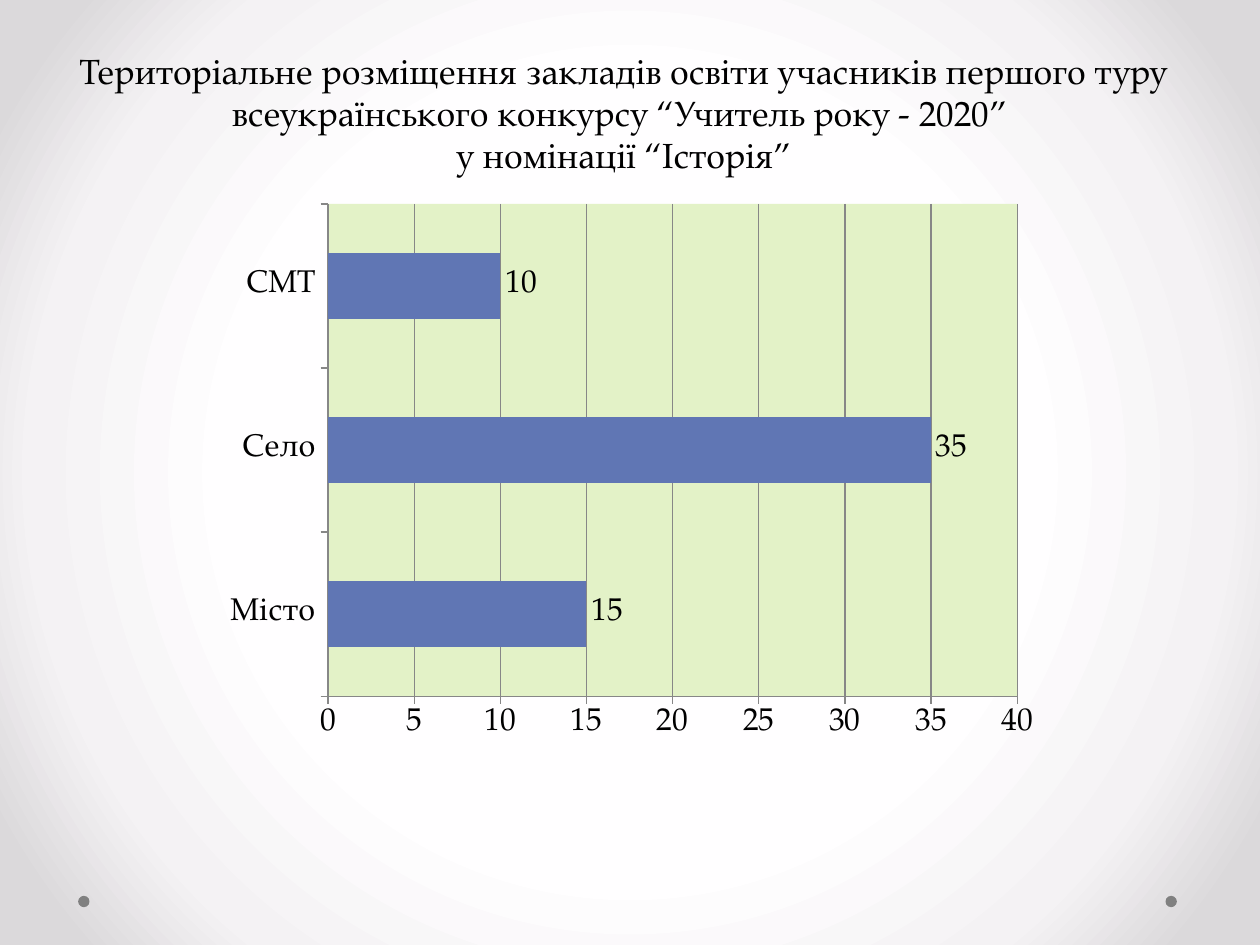
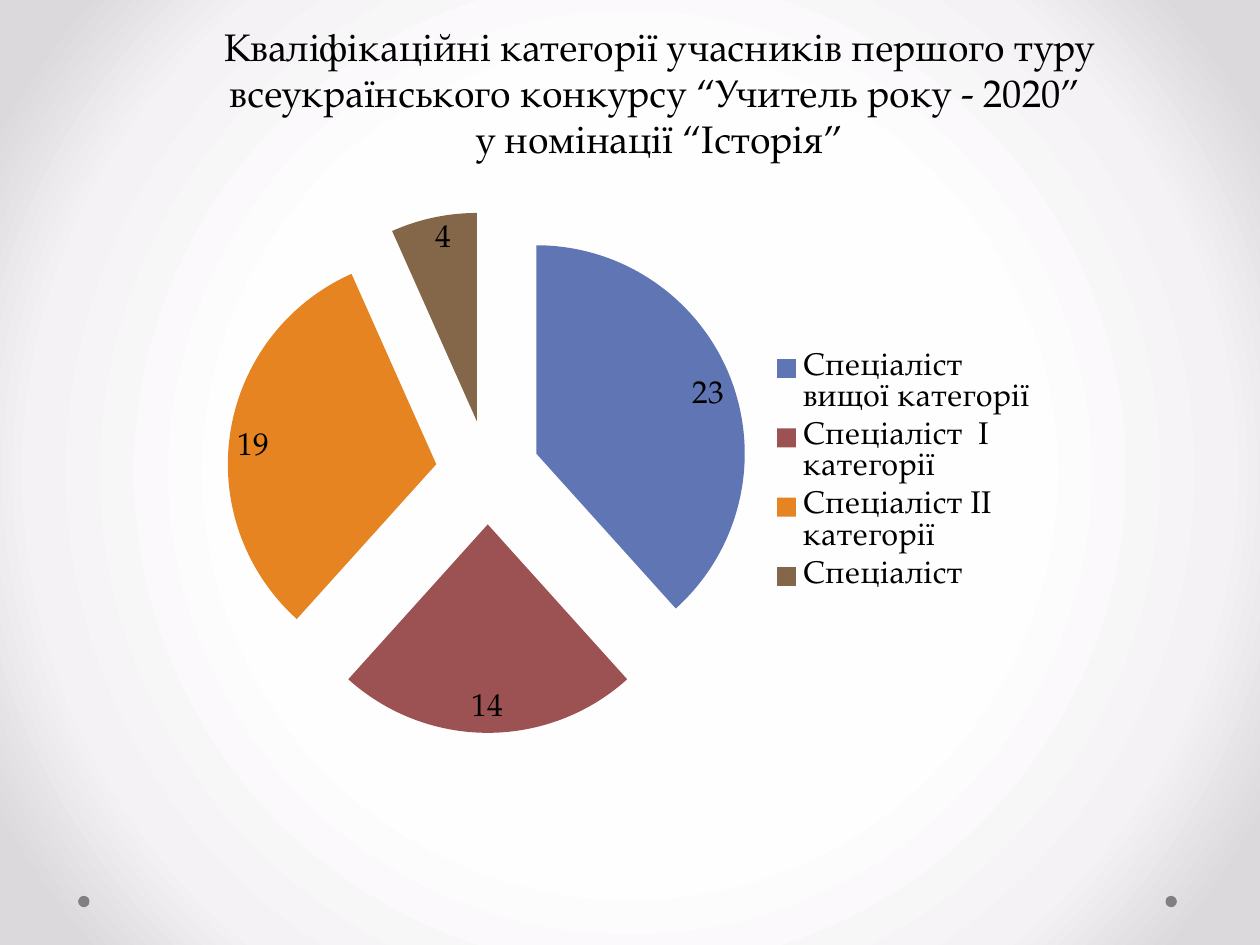
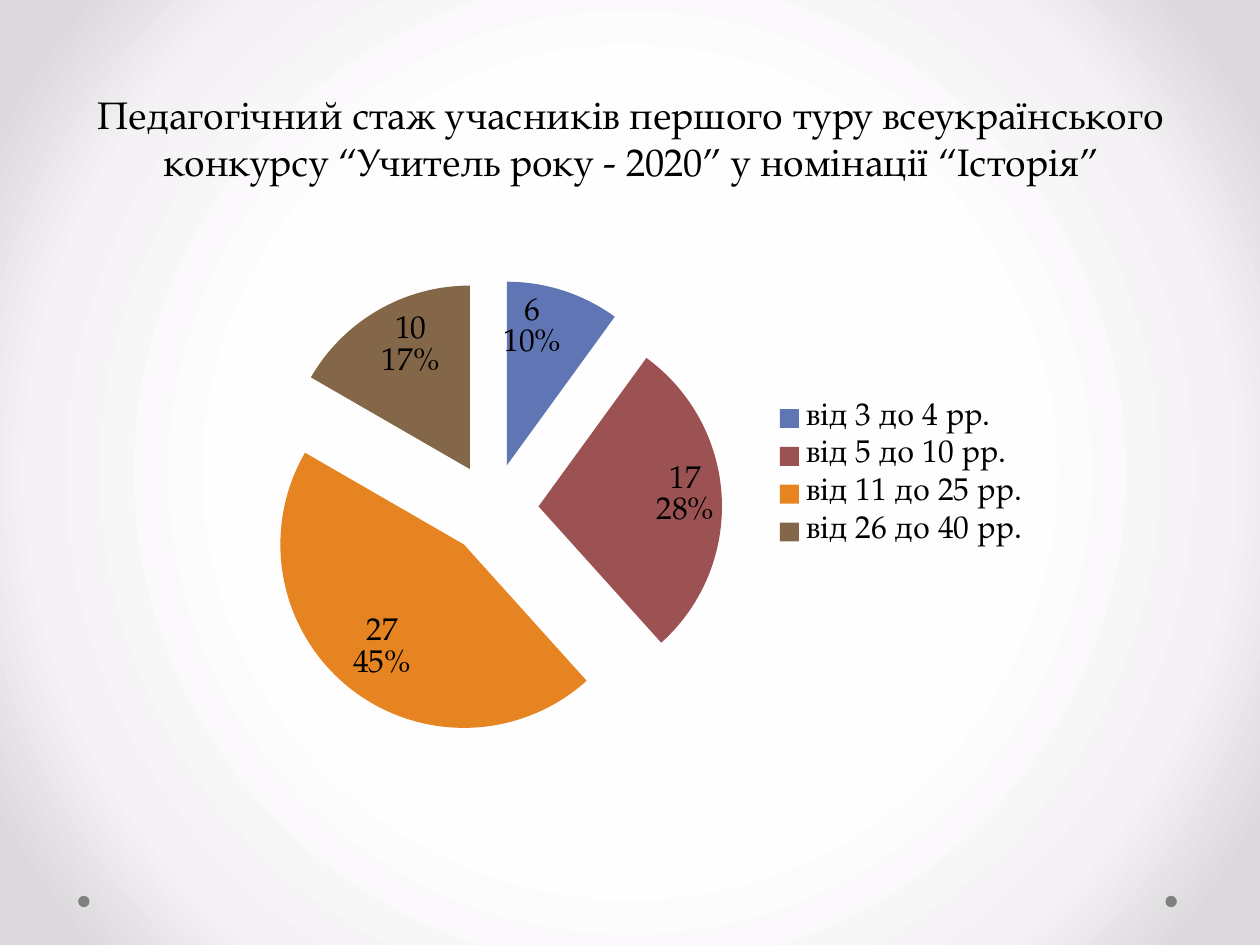
from dataclasses import dataclass

from pptx import Presentation
from pptx.chart.data import CategoryChartData
from pptx.dml.color import RGBColor
from pptx.enum.chart import XL_CHART_TYPE as CT
from pptx.enum.chart import XL_LABEL_POSITION as LP
from pptx.enum.chart import XL_LEGEND_POSITION, XL_TICK_MARK
from pptx.enum.shapes import MSO_SHAPE
from pptx.enum.text import MSO_ANCHOR, PP_ALIGN
from pptx.oxml import parse_xml
from pptx.oxml.ns import nsdecls, qn
from pptx.util import Inches, Pt


@dataclass(frozen=True)
class Theme:
    """Colours, font and type sizes shared by the slides."""

    font: str = "TeX Gyre Pagella"
    ink: str = "000000"
    dot: str = "808080"
    grid: str = "878787"
    plot: str = "E3F2C7"
    series: tuple = ("6076B4", "9C5252", "E68422", "846648")
    glow: tuple = ((50, "FFFEFF"), (76, "F4F2F4"), (92, "DBD9DB"))
    title: int = 22
    title_small: int = 20
    label: int = 18


T = Theme()
WIDTH, HEIGHT = Inches(10), Inches(7.5)


def rgb(value):
    """Return the colour for a hex string."""
    return RGBColor.from_string(value)


def share(left, top, width, height):
    """Turn percentages of the slide into a position and a size."""
    return [int(side * part / 100) for side, part in
            zip((WIDTH, HEIGHT, WIDTH, HEIGHT), (left, top, width, height))]


def set_font(font, size):
    """Apply the theme's font and ink."""
    font.name, font.size = T.font, Pt(size)
    font.color.rgb = rgb(T.ink)


def set_background(master):
    """Give the master a radial glow that darkens to the corners."""
    master.background.fill.solid()
    solid = next(master.element.iter(qn("a:solidFill")))
    stops = "".join(f'<a:gs pos="{pos * 1000}"><a:srgbClr val="{color}"/></a:gs>'
                    for pos, color in T.glow)
    glow = parse_xml(
        f'<a:gradFill {nsdecls("a")} rotWithShape="1"><a:gsLst>{stops}</a:gsLst>'
        '<a:path path="circle"><a:fillToRect l="50000" t="50000" r="50000" b="50000"/>'
        '</a:path></a:gradFill>')
    solid.getparent().replace(solid, glow)


def add_dots(s):
    """Draw the pair of small dots at the foot."""
    for left in (92.5, 6.2):
        sp = s.shapes.add_shape(MSO_SHAPE.OVAL, *share(left, 94.8, 0.9, 1.2))
        sp.shadow.inherit = False
        sp.fill.solid()
        sp.fill.fore_color.rgb = rgb(T.dot)
        sp.line.fill.background()


def add_title(s, lines, box, size=T.title):
    """Write a centred title that stands on the bottom of its box."""
    tf = s.shapes.add_textbox(*share(*box)).text_frame
    tf.word_wrap = True
    tf.vertical_anchor = MSO_ANCHOR.BOTTOM
    p = tf.paragraphs[0]
    p.alignment = PP_ALIGN.CENTER
    for i, line in enumerate(lines):
        if i:
            p.add_line_break()
        r = p.add_run()
        r.text = line
        set_font(r.font, size)


def add_slide(prs, lines, box, size=T.title):
    """Add a blank slide with its dots and title."""
    s = prs.slides.add_slide(prs.slide_layouts[6])
    add_dots(s)
    add_title(s, lines, box, size)
    return s


def place_plot(chart, box):
    """Set the inner plot area as shares of the chart."""
    area = next(chart.element.iter(qn("c:plotArea")))
    for old in area.findall(qn("c:layout")):
        area.remove(old)
    parts = "".join(f'<c:{key} val="{val}"/>' for key, val in zip("xywh", box))
    area.insert(0, parse_xml(
        f'<c:layout {nsdecls("c")}><c:manualLayout><c:layoutTarget val="inner"/>'
        f'<c:xMode val="edge"/><c:yMode val="edge"/>{parts}'
        '</c:manualLayout></c:layout>'))


def add_chart(s, kind, values, box, plot_box, label_pos):
    """Add a one-series chart with value labels."""
    data = CategoryChartData()
    data.categories = list(values)
    data.add_series("Series 1", list(values.values()))
    chart = s.shapes.add_chart(kind, *share(*box), data).chart
    chart.has_title = chart.has_legend = False
    set_font(chart.font, T.label)
    place_plot(chart, plot_box)
    plot = chart.plots[0]
    plot.has_data_labels = True
    labels = plot.data_labels
    labels.show_value = True
    labels.position = label_pos
    set_font(labels.font, T.label)
    return chart


def add_bars(s, values, box, plot_box):
    """Add horizontal bars on a tinted plot area."""
    chart = add_chart(s, CT.BAR_CLUSTERED, values, box, plot_box, LP.OUTSIDE_END)
    plot = chart.plots[0]
    plot.gap_width = 150
    plot.vary_by_categories = False
    fill = plot.series[0].format.fill
    fill.solid()
    fill.fore_color.rgb = rgb(T.series[0])
    value_axis = chart.value_axis
    value_axis.has_major_gridlines = True
    for axis in (chart.category_axis, value_axis):
        axis.major_tick_mark = XL_TICK_MARK.OUTSIDE
        axis.format.line.color.rgb = rgb(T.grid)
    value_axis.major_gridlines.format.line.color.rgb = rgb(T.grid)
    value_axis.minimum_scale, value_axis.maximum_scale = 0, 40
    value_axis.major_unit = 5
    next(chart.element.iter(qn("c:plotArea"))).append(parse_xml(
        f'<c:spPr {nsdecls("c", "a")}><a:solidFill><a:srgbClr val="{T.plot}"/>'
        '</a:solidFill></c:spPr>'))


def add_pie(s, values, box, plot_box, percent=False):
    """Add an exploded pie with a legend on the right."""
    chart = add_chart(s, CT.PIE, values, box, plot_box, LP.INSIDE_END)
    chart.has_legend = True
    chart.legend.position = XL_LEGEND_POSITION.RIGHT
    chart.legend.include_in_layout = False
    set_font(chart.legend.font, T.label)
    plot = chart.plots[0]
    plot.vary_by_categories = True
    plot.data_labels.show_percentage = percent
    if percent:
        next(chart.element.iter(qn("c:showBubbleSize"))).addnext(
            parse_xml(f'<c:separator {nsdecls("c")}>\n</c:separator>'))
    next(chart.element.iter(qn("c:tx"))).addnext(
        parse_xml(f'<c:explosion {nsdecls("c")} val="25"/>'))
    for i, color in enumerate(T.series):
        fill = plot.series[0].points[i].format.fill
        fill.solid()
        fill.fore_color.rgb = rgb(color)


def main():
    """Build the three slides."""
    prs = Presentation()
    prs.slide_width, prs.slide_height = WIDTH, HEIGHT
    set_background(prs.slide_master)
    chart_box = (16.7, 20.4, 66.7, 59.2)

    s = add_slide(prs, ("Територіальне розміщення закладів освіти учасників першого туру "
                        "всеукраїнського конкурсу “Учитель року - 2020” ",
                        "у номінації “Історія”"),
                  (4.3, 4.8, 90.4, 14.4), T.title_small)
    add_bars(s, {"Місто": 15, "Село": 35, "СМТ": 10},
             chart_box, (0.14, 0.02, 0.82, 0.88))

    s = add_slide(prs, ("Кваліфікаційні категорії учасників першого туру "
                        "всеукраїнського конкурсу “Учитель року - 2020” ",
                        "у номінації “Історія”"),
                  (6.7, 3.3, 91.3, 14.4))
    add_pie(s, {"Спеціаліст вищої категорії": 23, "Спеціаліст  І категорії": 14,
                "Спеціаліст ІІ категорії": 19, "Спеціаліст": 4},
            chart_box, (0.02, 0.03, 0.62, 0.94))

    s = add_slide(prs, ("Педагогічний стаж учасників першого туру всеукраїнського "
                        "конкурсу “Учитель року - 2020” у номінації “Історія”",),
                  (5.1, 5.9, 90, 14.2))
    add_pie(s, {"від 3 до 4 рр. ": 6, "від 5 до 10 рр.": 17,
                "від 11 до 25 рр.": 27, "від 26 до 40 рр.": 10},
            (16.1, 20.7, 66.7, 59.2), (0.07, 0.15, 0.55, 0.82), percent=True)

    prs.save("out.pptx")


if __name__ == "__main__":
    main()
